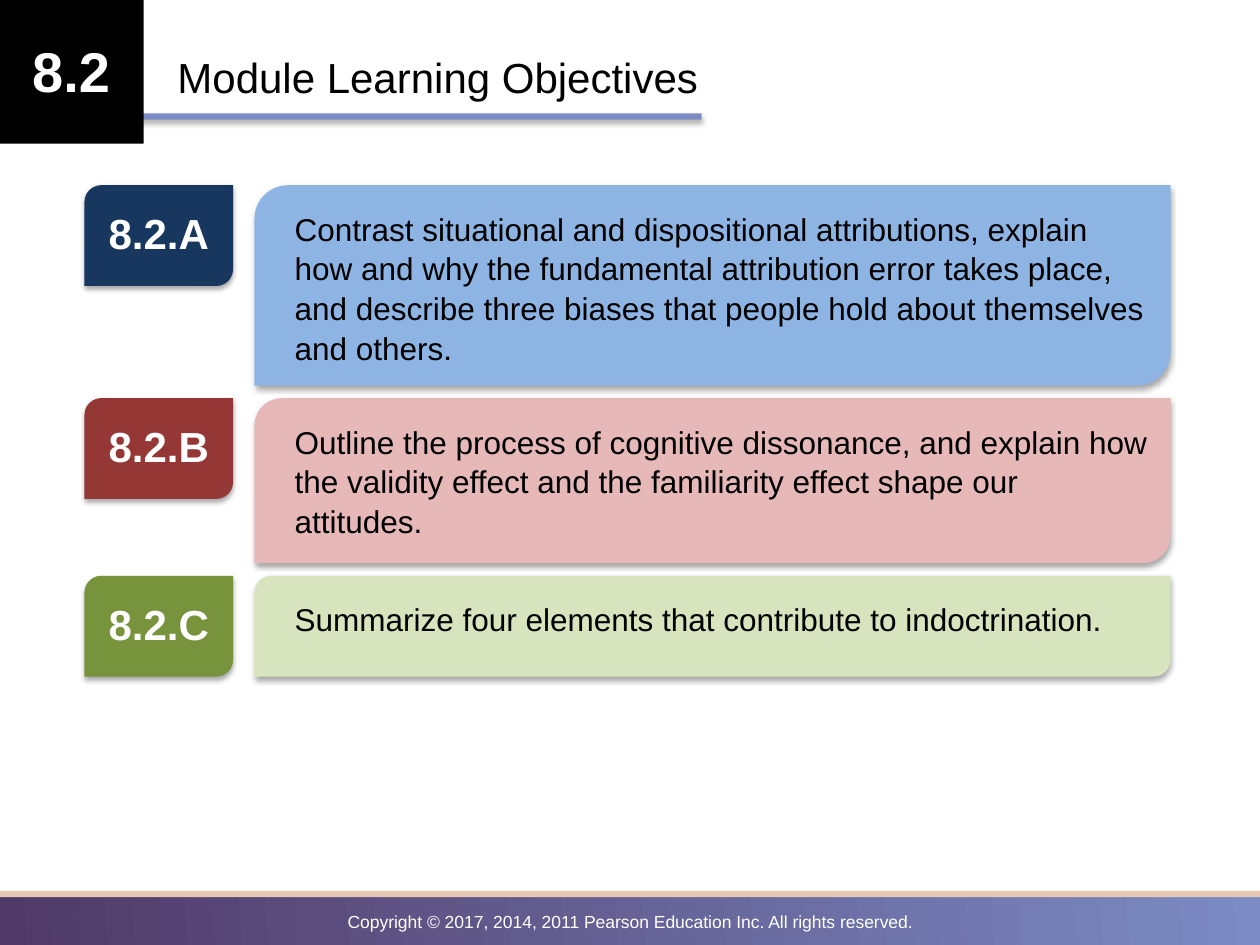
from lxml.etree import SubElement
from pptx import Presentation
from pptx.dml.color import RGBColor
from pptx.enum.shapes import MSO_SHAPE as Shape
from pptx.enum.text import PP_ALIGN as Align
from pptx.oxml.ns import qn
from pptx.util import Inches, Pt

FONT = "Arial"
BLACK = RGBColor(0x00, 0x00, 0x00)
WHITE = RGBColor(0xFF, 0xFF, 0xFF)
PLUM = RGBColor(0x4F, 0x39, 0x67)
LILAC = RGBColor(0x7C, 0x8B, 0xC4)
SAND = RGBColor(0xE7, 0xC8, 0xB3)
NAVY = RGBColor(0x17, 0x37, 0x5E)
SKY = RGBColor(0x8E, 0xB4, 0xE3)
BRICK = RGBColor(0x95, 0x37, 0x35)
ROSE = RGBColor(0xE6, 0xB9, 0xB8)
MOSS = RGBColor(0x77, 0x93, 0x3C)
LIME = RGBColor(0xD7, 0xE4, 0xBD)

TOP, GAP, PAD = 1.47, 0.1, 0.13
GOALS = [
    ("8.2.A", NAVY, SKY, 1.59,
     "Contrast situational and dispositional attributions, explain how and why "
     "the fundamental attribution error takes place, and describe three biases "
     "that people hold about themselves and others."),
    ("8.2.B", BRICK, ROSE, 1.31,
     "Outline the process of cognitive dissonance, and explain how the validity "
     "effect and the familiarity effect shape our attitudes."),
    ("8.2.C", MOSS, LIME, 0.8,
     "Summarize four elements that contribute to indoctrination."),
]


def add_box(slide, x, y, w, h, color, kind=Shape.RECTANGLE, shade=False):
    box = slide.shapes.add_shape(kind, Inches(x), Inches(y), Inches(w), Inches(h))
    box.fill.solid()
    box.fill.fore_color.rgb = color
    box.line.fill.background()
    box.shadow.inherit = False
    if shade:
        drop_shade(box)
    return box


def drop_shade(box):
    """Give the box a soft shadow straight below it."""
    effects = box._element.spPr.find(qn("a:effectLst"))
    outer = SubElement(effects, qn("a:outerShdw"), blurRad=str(Pt(3.1)),
                       dist=str(Pt(1.8)), dir="5400000", rotWithShape="0")
    color = SubElement(outer, qn("a:srgbClr"), val="000000")
    SubElement(color, qn("a:alpha"), val="35000")


def add_text(slide, text, x, y, w, h, size, color=BLACK, bold=False,
             align=Align.LEFT, pitch=None):
    frame = slide.shapes.add_textbox(
        Inches(x), Inches(y), Inches(w), Inches(h)).text_frame
    frame.word_wrap = True
    para = frame.paragraphs[0]
    para.text = text
    para.alignment = align
    para.line_spacing = pitch
    font = para.font
    font.name, font.size, font.bold = FONT, Pt(size), bold
    font.color.rgb = color


def add_footer(slide):
    band = add_box(slide, 0, 7.08, 10, 0.45, PLUM)
    band.fill.gradient()
    band.fill.gradient_angle = 4
    for stop, color, place in zip(band.fill.gradient_stops, (PLUM, LILAC), (0, 1)):
        stop.color.rgb = color
        stop.position = place
    add_box(slide, 0, 7.07, 10.05, 0.05, SAND)
    add_text(slide, "Copyright © 2017, 2014, 2011 Pearson Education Inc. "
             "All rights reserved.", 0, 7.18, 10, 0.27, 10, WHITE,
             align=Align.CENTER)


def add_header(slide):
    add_box(slide, -0.2, 0.9, 5.77, 0.05, LILAC, shade=True)
    add_box(slide, -0.01, -0.01, 1.15, 1.15, BLACK)
    add_text(slide, "8.2", -0.01, 0.24, 1.15, 0.64, 32, WHITE, True, Align.CENTER)
    add_text(slide, "Module Learning Objectives", 1.31, 0.36, 7.71, 0.5, 24)


def add_goal(slide, y, label, dark, light, high, text):
    kind = Shape.ROUND_2_DIAG_RECTANGLE
    add_box(slide, 0.67, y, 1.18, 0.8, dark, kind, True)
    add_text(slide, label, 0.67, y + PAD, 1.18, 0.5, 24, WHITE, True, Align.CENTER)
    add_box(slide, 2.02, y, 7.27, high, light, kind, True)
    add_text(slide, text, 2.24, y + PAD, 6.99, high - 2 * PAD, 18, pitch=1.05)


def main():
    deck = Presentation()
    deck.slide_width, deck.slide_height = Inches(10), Inches(7.5)
    slide = deck.slides.add_slide(deck.slide_layouts[6])
    add_footer(slide)
    add_header(slide)
    y = TOP
    for label, dark, light, high, text in GOALS:
        add_goal(slide, y, label, dark, light, high, text)
        y += high + GAP
    deck.save("out.pptx")


if __name__ == "__main__":
    main()
